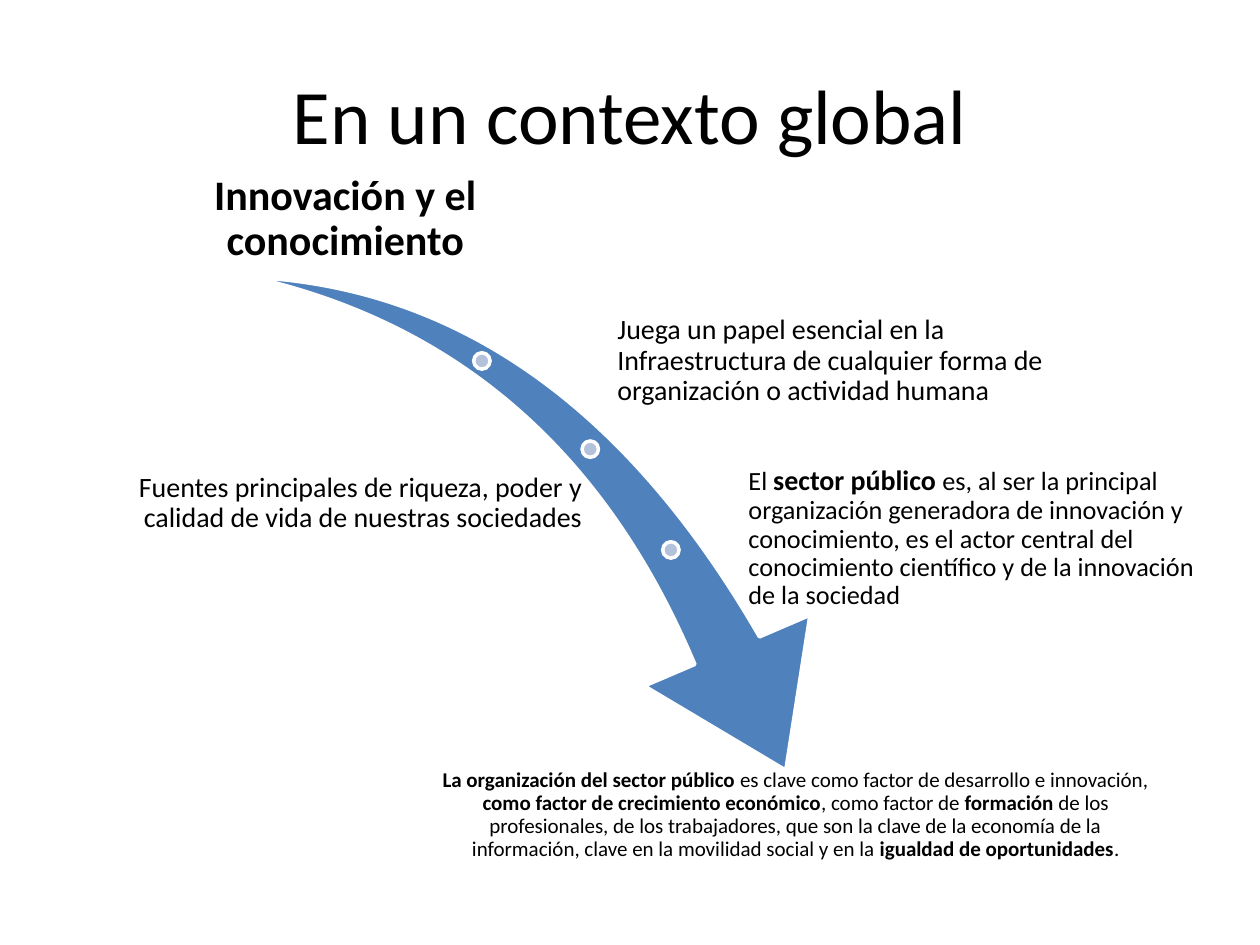
"""Build the slide on innovation and knowledge in a global context."""
from pptx import Presentation
from pptx.dml.color import RGBColor
from pptx.enum import shapes, text
from pptx.util import Inches, Pt

BLACK = RGBColor(0x00, 0x00, 0x00)
WHITE = RGBColor(0xFF, 0xFF, 0xFF)
BLUE = RGBColor(0x4F, 0x81, 0xBD)
PALE = RGBColor(0xB3, 0xC1, 0xDB)
KIND = shapes.MSO_SHAPE
LEFT, MID, RIGHT = text.PP_ALIGN.LEFT, text.PP_ALIGN.CENTER, text.PP_ALIGN.RIGHT
TOP, HALF, LOW = text.MSO_ANCHOR.TOP, text.MSO_ANCHOR.MIDDLE, text.MSO_ANCHOR.BOTTOM

TITLE = "En un contexto global"
ARROW = (1.9, 2.35, 4.96, 3.46)
DOTS = [(3.76, 2.8), (4.62, 3.5), (5.26, 4.3)]
DOT = 0.13

# box, align, anchor, inset, top inset, runs of (words, size, bold)
NOTES = [
    ((1.57, 1.21, 2.34, 0.92), MID, LOW, 0.03, 0.03,
     [("Innovación y el conocimiento", 24, True)]),
    ((4.88, 2.25, 3.65, 1.23), LEFT, HALF, 0.02, 0.02,
     [("Juega un papel esencial en la Infraestructura de cualquier forma de "
       "organización o actividad humana", 16, False)]),
    ((0.5, 3.51, 4.14, 0.97), RIGHT, HALF, 0.02, 0.02,
     [("Fuentes principales de riqueza, poder y calidad de vida de nuestras "
       "sociedades", 16, False)]),
    ((5.92, 3.53, 3.58, 1.49), LEFT, HALF, 0.02, 0.02,
     [("El ", 15, False), ("sector público ", 16, True),
      ("es, al ser la principal organización generadora de innovación y "
       "conocimiento, es el actor central del conocimiento científico y de la "
       "innovación de la sociedad", 15, False)]),
    ((3.48, 5.67, 5.67, 1.64), MID, TOP, 0.01, 0.44,
     [("La organización del sector público ", 12, True),
      ("es clave como factor de desarrollo e innovación, ", 12, False),
      ("como factor de crecimiento económico", 12, True),
      (", como factor de ", 12, False), ("formación", 12, True),
      (" de los profesionales, de los trabajadores, que son la clave de la "
       "economía de la información, clave en la movilidad social y en la ", 12, False),
      ("igualdad de oportunidades", 12, True), (".", 12, False)]),
]


def add_form(slide, kind, box, fill):
    form = slide.shapes.add_shape(kind, *map(Inches, box))
    form.shadow.inherit = False
    form.fill.solid()
    form.fill.fore_color.rgb = fill
    form.line.color.rgb = WHITE
    form.line.width = Pt(2)
    return form


def add_note(slide, box, align, anchor, inset, top, runs, space=0.9):
    frame = slide.shapes.add_textbox(*map(Inches, box)).text_frame
    frame.word_wrap = True
    frame.vertical_anchor = anchor
    frame.margin_left = frame.margin_right = frame.margin_bottom = Inches(inset)
    frame.margin_top = Inches(top)
    para = frame.paragraphs[0]
    para.alignment = align
    para.line_spacing = space
    para.font.name = "Calibri"
    para.font.color.rgb = BLACK
    for words, size, bold in runs:
        run = para.add_run()
        run.text = words
        run.font.size = Pt(size)
        run.font.bold = bold


def main():
    deck = Presentation()
    deck.slide_width, deck.slide_height = Inches(10), Inches(7.5)
    slide = deck.slides.add_slide(deck.slide_layouts[6])
    add_note(slide, (0.5, 0.3, 9, 1.25), MID, HALF, 0.1, 0.05,
             [(TITLE, 44, False)], 1.0)
    arrow = add_form(slide, KIND.SWOOSH_ARROW, ARROW, BLUE)
    arrow.rotation = 73.3
    arrow.adjustments[0] = 0.16
    arrow.adjustments[1] = 0.31
    for left, top in DOTS:
        add_form(slide, KIND.OVAL, (left, top, DOT, DOT), PALE)
    for note in NOTES:
        add_note(slide, *note)
    deck.save("out.pptx")


if __name__ == "__main__":
    main()
